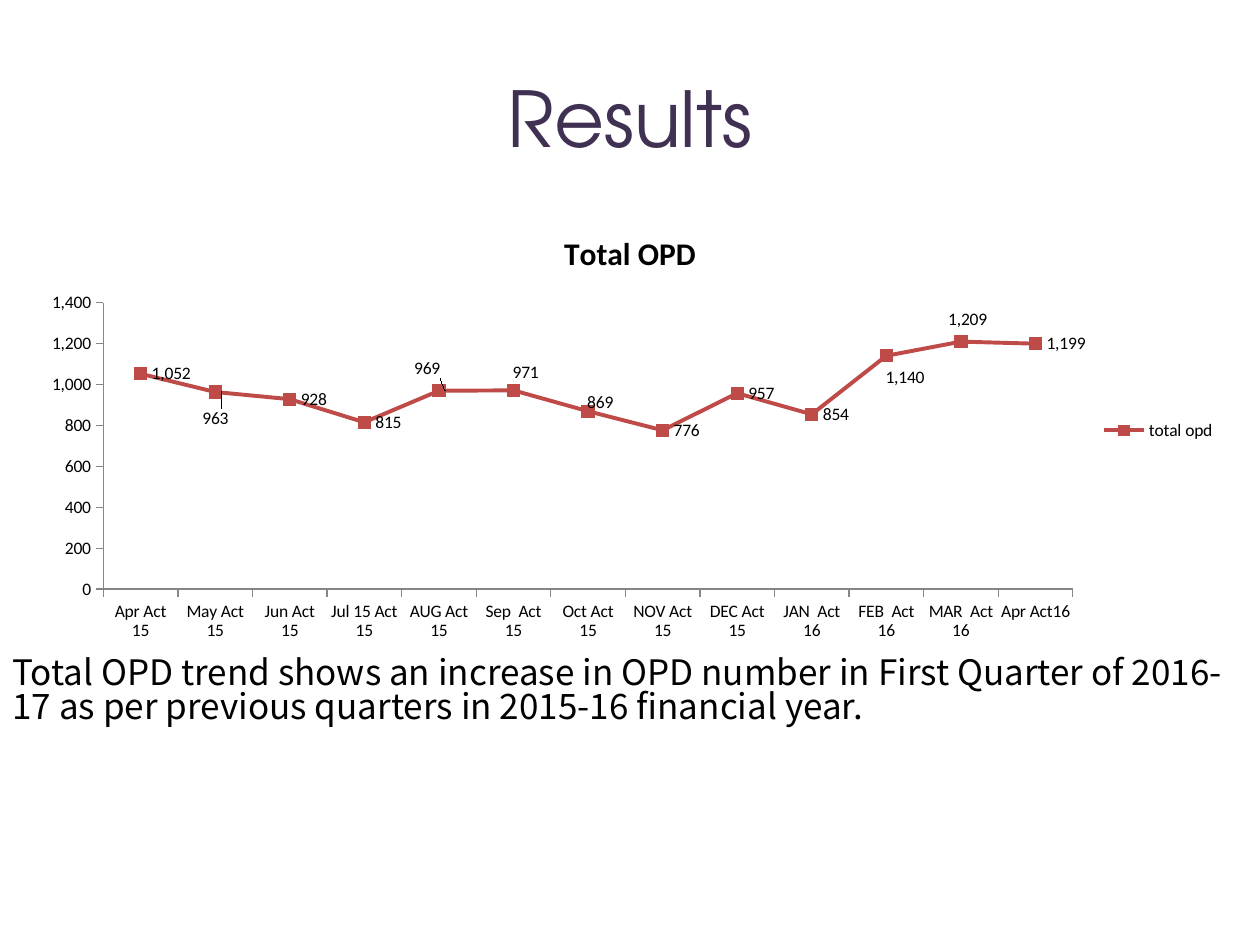
from dataclasses import dataclass

from lxml.etree import SubElement
from pptx import Presentation
from pptx.chart.data import CategoryChartData
from pptx.dml.color import RGBColor
from pptx.enum.chart import (XL_CHART_TYPE, XL_LABEL_POSITION,
                             XL_LEGEND_POSITION, XL_MARKER_STYLE, XL_TICK_MARK)
from pptx.enum.text import MSO_ANCHOR, MSO_AUTO_SIZE, PP_ALIGN
from pptx.oxml.ns import qn
from pptx.util import Pt

MONTHLY_OPD = {
    "Apr Act 15": 1052, "May Act 15": 963, "Jun Act 15": 928,
    "Jul 15 Act 15": 815, "AUG Act 15": 969, "Sep  Act 15": 971,
    "Oct Act 15": 869, "NOV Act 15": 776, "DEC Act 15": 957,
    "JAN  Act 16": 854, "FEB  Act 16": 1140, "MAR  Act 16": 1209,
    "Apr Act16": 1199,
}
# Label shifts from the right of the point, as shares of the chart size
LABEL_SHIFTS = {
    "May Act 15": (-0.02, 0.06), "AUG Act 15": (-0.03, -0.05),
    "Sep  Act 15": (-0.01, -0.04), "Oct Act 15": (-0.01, -0.02),
    "FEB  Act 16": (-0.01, 0.05), "MAR  Act 16": (-0.02, -0.05),
}
PLOT_LAYOUT = {"layoutTarget": "inner", "xMode": "edge", "yMode": "edge",
               "x": 0.06, "y": 0.21, "w": 0.81, "h": 0.65}
NUMBER_FORMAT = "#,##0"


@dataclass(frozen=True)
class Theme:
    heading: RGBColor = RGBColor.from_string("403152")
    ink: RGBColor = RGBColor.from_string("000000")
    axis: RGBColor = RGBColor.from_string("868686")
    trend: RGBColor = RGBColor.from_string("BE4B48")
    heading_font: str = "TeX Gyre Adventor"
    body_font: str = "Noto Sans CJK KR"
    chart_font: str = "Calibri"
    heading_size: int = 44
    body_size: int = 20
    chart_title_size: int = 18
    chart_size: int = 10


def apply(target, values):
    for name, value in values.items():
        setattr(target, name, value)


def set_font(font, name, size, color, bold=False):
    apply(font, {"name": name, "size": Pt(size), "bold": bold})
    font.color.rgb = color


def fill_layout(layout, values):
    """Write manual layout values into a c:layout element."""
    manual = SubElement(layout, qn("c:manualLayout"))
    for name, value in values.items():
        SubElement(manual, qn(f"c:{name}")).set("val", str(value))


class SlideBuilder:
    def __init__(self, slide, theme):
        self.slide = slide
        self.theme = theme

    def title(self, text, left, top, width, height):
        heading = self.slide.shapes.title
        apply(heading, {"left": Pt(left), "top": Pt(top),
                        "width": Pt(width), "height": Pt(height)})
        frame = heading.text_frame
        frame.text = text
        frame.vertical_anchor = MSO_ANCHOR.MIDDLE
        paragraph = frame.paragraphs[0]
        paragraph.alignment = PP_ALIGN.CENTER
        set_font(paragraph.runs[0].font, self.theme.heading_font,
                 self.theme.heading_size, self.theme.heading)

    def text(self, text, left, top, width, height):
        frame = self.slide.shapes.add_textbox(
            Pt(left), Pt(top), Pt(width), Pt(height)).text_frame
        apply(frame, {"word_wrap": True, "text": text,
                      "auto_size": MSO_AUTO_SIZE.SHAPE_TO_FIT_TEXT})
        paragraph = frame.paragraphs[0]
        paragraph.line_spacing = 0.83
        set_font(paragraph.runs[0].font, self.theme.body_font,
                 self.theme.body_size, self.theme.ink)

    def line_chart(self, title, series_name, monthly, left, top, width, height):
        theme = self.theme
        data = CategoryChartData(number_format=NUMBER_FORMAT)
        data.categories = list(monthly)
        data.add_series(series_name, list(monthly.values()))
        chart = self.slide.shapes.add_chart(
            XL_CHART_TYPE.LINE_MARKERS, Pt(left), Pt(top), Pt(width),
            Pt(height), data).chart
        set_font(chart.font, theme.chart_font, theme.chart_size, theme.ink)

        chart.has_title = True
        chart.chart_title.text_frame.text = title
        title_run = chart.chart_title.text_frame.paragraphs[0].runs[0]
        set_font(title_run.font, theme.chart_font, theme.chart_title_size,
                 theme.ink, bold=True)
        chart.has_legend = True
        apply(chart.legend, {"position": XL_LEGEND_POSITION.RIGHT,
                             "include_in_layout": False})

        plot_area = chart.plots[0]._element.getparent()
        layout = plot_area.find(qn("c:layout"))
        if layout is None:
            layout = SubElement(plot_area, qn("c:layout"))
            plot_area.insert(0, layout)
        fill_layout(layout, PLOT_LAYOUT)

        for axis in (chart.category_axis, chart.value_axis):
            apply(axis, {"has_major_gridlines": False,
                         "major_tick_mark": XL_TICK_MARK.OUTSIDE,
                         "minor_tick_mark": XL_TICK_MARK.NONE})
            axis.format.line.color.rgb = theme.axis
            axis.format.line.width = Pt(0.75)
        apply(chart.value_axis, {"minimum_scale": 0, "maximum_scale": 1400,
                                 "major_unit": 200})
        apply(chart.value_axis.tick_labels,
              {"number_format": NUMBER_FORMAT,
               "number_format_is_linked": False})
        self.style_trend(chart.plots[0], list(monthly))

    def style_trend(self, plot, months):
        plot.vary_by_categories = False
        trend = plot.series[0]
        trend.smooth = False
        trend.format.line.color.rgb = self.theme.trend
        trend.format.line.width = Pt(2.25)
        apply(trend.marker, {"style": XL_MARKER_STYLE.SQUARE, "size": 7})
        trend.marker.format.fill.solid()
        trend.marker.format.fill.fore_color.rgb = self.theme.trend
        trend.marker.format.line.color.rgb = self.theme.trend
        apply(trend.data_labels, {"show_value": True,
                                  "number_format": NUMBER_FORMAT,
                                  "number_format_is_linked": False,
                                  "position": XL_LABEL_POSITION.RIGHT})
        for month, (x, y) in LABEL_SHIFTS.items():
            index = months.index(month)
            trend.points[index].data_label.position = XL_LABEL_POSITION.RIGHT
            for label in trend.data_labels._element.findall(qn("c:dLbl")):
                if label.find(qn("c:idx")).get("val") == str(index):
                    layout = SubElement(label, qn("c:layout"))
                    label.insert(1, layout)
                    fill_layout(layout, {"x": x, "y": y})


def main():
    presentation = Presentation()
    apply(presentation, {"slide_width": Pt(720), "slide_height": Pt(540)})
    slide = presentation.slides.add_slide(presentation.slide_layouts[5])
    results = SlideBuilder(slide, Theme())
    results.title("Results", 36, 21.6, 648, 90)
    results.text("Total OPD trend shows an increase in OPD number in First "
                 "Quarter of 2016-17 as per previous quarters in 2015-16 "
                 "financial year.", 0, 372, 720, 80)
    results.line_chart("Total OPD", "total opd", MONTHLY_OPD,
                       18, 120, 684, 252)
    presentation.save("out.pptx")


if __name__ == "__main__":
    main()
